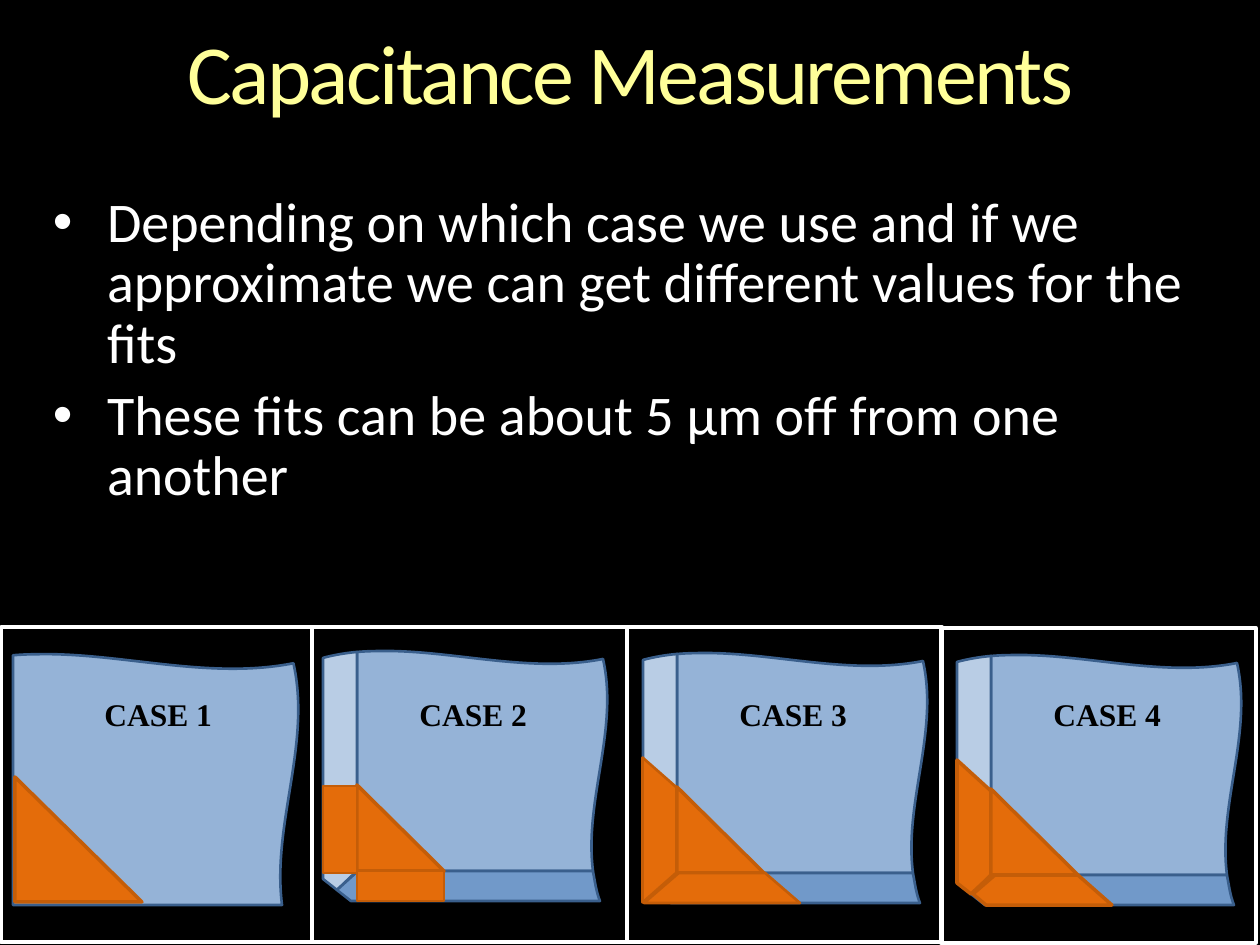
from dataclasses import dataclass

from lxml import etree
from pptx import Presentation, util as u
from pptx.dml.color import RGBColor
from pptx.enum import shapes as s, text as t
from pptx.oxml.ns import qn

PX = 914400 / 126
COLORS = {
    "background": "000000", "title": "FFFF99", "body": "FFFFFF",
    "label": "000000", "frame": "FFFFFF", "front": "95B3D7",
    "side": "B9CDE5", "bottom": "7199C9", "edge": "3A5F8C",
    "contact": "E46C0A", "contact_edge": "C45D08",
}
STYLES = {
    "title": {"size": u.Pt(48), "name": "Calibri"},
    "body": {"size": u.Pt(32), "name": "Calibri"},
    "label": {"size": u.Pt(18), "name": "Times New Roman", "bold": True},
}
BULLETS = (
    "Depending on which case we use and if we approximate we can get different values for the fits",
    "These fits can be about 5 µm off from one another",
)
# Outlines are relative to the lower left corner of the front face:
# a pair is a straight step, six numbers are a cubic curve.
FRONT = ((33, -220), (103, -219, 175, -198, 246, -212),
         (262, -141, 227, -71, 236, 0), (0, 0), (0, -219),
         (11, -220, 21, -220, 33, -220))
SIDE = ((0, -219), (0, 0), (-20, 19), (-34, 8), (-34, -213),
        (-23, -216, -11, -218, 0, -219))
BOTTOM = ((1, 0), (236, 0), (238, 10, 239, 20, 243, 30), (-6, 30), (-20, 19))
BOTTOM_CONTACT = ((4, 0), (87, 0), (121, 30), (-5, 30), (-18, 19))
SIDE_CONTACT = ((-34, -115), (0, -84), (0, 0), (-5, 5), (-20, 19), (-34, 8))


@dataclass(frozen=True)
class Patch:
    """A contact area in a preset shape, placed from the front corner."""
    preset: s.MSO_SHAPE
    box: tuple[int, int, int, int]
    weight: float = 1.5
    rotation: int = 0
    adjustment: float | None = None


@dataclass(frozen=True)
class Case:
    number: int
    corner: tuple[int, int]
    label_left: int
    frame: tuple[int, int, int, int]
    patches: tuple[Patch, ...]
    outlines: tuple = ()
    scale: float = 1
    beveled: bool = True


CORNER_PATCH = Patch(s.MSO_SHAPE.RIGHT_TRIANGLE, (0, -86, 87, 86), 2)
CASES = (
    Case(1, (13, 905), 92, (1, 627, 311, 315),
         (Patch(s.MSO_SHAPE.RIGHT_TRIANGLE, (2, -128, 127, 125), 2),),
         scale=1.14, beveled=False),
    Case(2, (357, 871), 407, (312, 627, 315, 315),
         (CORNER_PATCH,
          Patch(s.MSO_SHAPE.RECTANGLE, (-34, -85, 34, 87)),
          Patch(s.MSO_SHAPE.RECTANGLE, (0, 0, 87, 30)))),
    Case(3, (677, 873), 727, (627, 627, 315, 315),
         (CORNER_PATCH,
          Patch(s.MSO_SHAPE.TRAPEZOID, (-33, 0, 156, 30), adjustment=1.16),
          Patch(s.MSO_SHAPE.TRAPEZOID, (-90, -60, 145, 34), rotation=90,
                adjustment=0.88))),
    Case(4, (991, 875), 1041, (941, 628, 315, 315), (CORNER_PATCH,),
         (BOTTOM_CONTACT, SIDE_CONTACT)),
)


def emu(*lengths: int) -> list[u.Emu]:
    return [u.Emu(round(length * PX)) for length in lengths]


def rgb(role: str) -> RGBColor:
    return RGBColor.from_string(COLORS[role])


def paint(shape, fill: str | None, edge: str, weight: float) -> None:
    shape.shadow.inherit = False
    if fill:
        shape.fill.solid()
        shape.fill.fore_color.rgb = rgb(fill)
    else:
        shape.fill.background()
    shape.line.color.rgb = rgb(edge)
    shape.line.width = u.Pt(weight)


def bend(face, steps: list[list[tuple[float, float]]]) -> None:
    """Replace straight segments by cubic curves where a step has controls."""
    segments = list(face._element.iter(qn("a:lnTo")))
    for segment, points in zip(segments, steps):
        if len(points) == 1:
            continue
        curve = etree.Element(qn("a:cubicBezTo"))
        for x, y in points:
            etree.SubElement(curve, qn("a:pt"), x=str(round(x - face.left)),
                             y=str(round(y - face.top)))
        segment.getparent().replace(segment, curve)


def draw_outline(slide, outline: tuple, case: Case, fill: str,
                 edge: str = "edge", weight: float = 1.5) -> None:
    left, top = case.corner
    steps = [[((left + x * case.scale) * PX, (top + y * case.scale) * PX)
              for x, y in zip(step[::2], step[1::2])] for step in outline]
    ends = [step[-1] for step in steps]
    builder = slide.shapes.build_freeform(*ends[0], scale=1.0)
    builder.add_line_segments(ends[1:], close=True)
    face = builder.convert_to_shape()
    bend(face, steps[1:])
    paint(face, fill, edge, weight)


def draw_patch(slide, patch: Patch, corner: tuple[int, int]) -> None:
    x, y, width, height = patch.box
    area = slide.shapes.add_shape(
        patch.preset, *emu(corner[0] + x, corner[1] + y, width, height))
    area.rotation = patch.rotation
    if patch.adjustment is not None:
        area.adjustments[0] = patch.adjustment
    paint(area, "contact", "contact_edge", patch.weight)


def add_text(slide, box: tuple[int, int, int, int], role: str, *lines: str,
             inset: bool = False):
    frame = slide.shapes.add_textbox(*emu(*box)).text_frame
    frame.word_wrap = True
    if not inset:
        for side in ("left", "top", "right", "bottom"):
            setattr(frame, f"margin_{side}", 0)
    for i, line in enumerate(lines):
        paragraph = frame.add_paragraph() if i else frame.paragraphs[0]
        run = paragraph.add_run()
        run.text = line
        for attribute, value in STYLES[role].items():
            setattr(run.font, attribute, value)
        run.font.color.rgb = rgb(role)
    return frame


def add_heading(slide) -> None:
    heading = add_text(slide, (53, 32, 1155, 92), "title",
                       "Capacitance Measurements").paragraphs[0]
    heading.alignment = t.PP_ALIGN.CENTER
    heading.line_spacing = 0.9
    heading.runs[0].font._element.set("spc", "-150")


def add_bullets(slide) -> None:
    body = add_text(slide, (53, 194, 1155, 319), "body", *BULLETS)
    indent = emu(54)[0]
    for i, paragraph in enumerate(body.paragraphs):
        properties = paragraph._p.get_or_add_pPr()
        properties.set("marL", str(indent))
        properties.set("indent", str(-indent))
        etree.SubElement(properties, qn("a:buFont"), typeface="Arial")
        etree.SubElement(properties, qn("a:buChar"), char="•")
        paragraph.line_spacing = 0.9
        if i:
            paragraph.space_before = u.Pt(6.4)


def draw_case(slide, case: Case) -> None:
    draw_outline(slide, FRONT, case, "front")
    if case.beveled:
        draw_outline(slide, SIDE, case, "side")
        draw_outline(slide, BOTTOM, case, "bottom")
    for outline in case.outlines:
        draw_outline(slide, outline, case, "contact", "contact_edge", 2)
    for patch in case.patches:
        draw_patch(slide, patch, case.corner)
    add_text(slide, (case.label_left, 689, 156, 38), "label",
             f"CASE {case.number}", inset=True)
    frame = slide.shapes.add_shape(s.MSO_SHAPE.RECTANGLE, *emu(*case.frame))
    paint(frame, None, "frame", 2)


def main() -> None:
    deck = Presentation()
    deck.slide_width, deck.slide_height = emu(1260, 945)
    slide = deck.slides.add_slide(deck.slide_layouts[6])
    slide.background.fill.solid()
    slide.background.fill.fore_color.rgb = rgb("background")
    add_heading(slide)
    add_bullets(slide)
    for case in CASES:
        draw_case(slide, case)
    deck.save("out.pptx")


if __name__ == "__main__":
    main()
